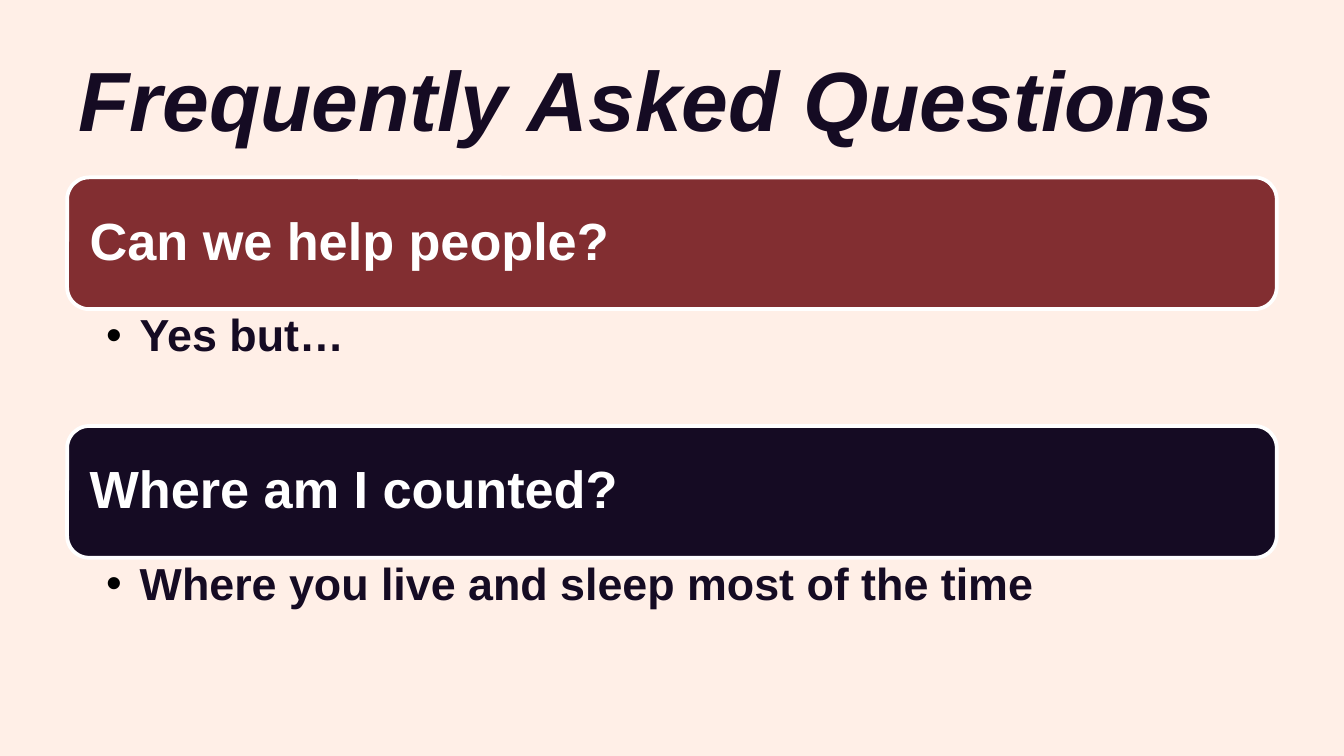
"""Build a slide of frequently asked questions with their answers."""
from dataclasses import dataclass

from lxml import etree
from pptx import Presentation
from pptx import util as u
from pptx.dml.color import RGBColor
from pptx.enum import shapes, text
from pptx.oxml.ns import qn


@dataclass(frozen=True)
class Theme:
    font: str = "Arial"
    paper: str = "FFEFE7"
    ink: str = "150B23"
    red: str = "822E31"
    white: str = "FFFFFF"
    bullet: str = "000000"
    title_size: int = 45
    question_size: int = 28
    answer_size: int = 24


def set_insets(frame, left, top, right, bottom):
    frame.word_wrap = True
    frame.margin_left, frame.margin_top = u.Inches(left), u.Inches(top)
    frame.margin_right, frame.margin_bottom = u.Inches(right), u.Inches(bottom)


def style_span(para, size, color, italic=False):
    font = para.runs[0].font
    font.name, font.size = theme.font, u.Pt(size)
    font.bold, font.italic = True, italic
    font.color.rgb = RGBColor.from_string(color)


theme = Theme()
deck = Presentation()
deck.slide_width = u.Inches(10)
deck.slide_height = deck.slide_width * 9 // 16
page = deck.slides.add_slide(deck.slide_layouts[6])
page.background.fill.solid()
page.background.fill.fore_color.rgb = RGBColor.from_string(theme.paper)

column_left, column_width = u.Inches(0.5), u.Inches(9)
first_row, question_height, answer_height = u.Inches(1.32), u.Inches(0.98), u.Inches(0.87)
row_pitch = question_height + answer_height

title = page.shapes.add_textbox(u.Inches(0.31), u.Inches(0.25), column_width, u.Inches(0.94))
set_insets(title.text_frame, 0.1, 0.1, 0.1, 0.1)
title.text_frame.text = "Frequently Asked Questions"
para = title.text_frame.paragraphs[0]
para.alignment = text.PP_ALIGN.CENTER
style_span(para, theme.title_size, theme.ink, italic=True)

entries = [
    ("Can we help people?", "Yes but…", theme.red),
    ("Where am I counted?", "Where you live and sleep most of the time", theme.ink),
]
for row, (question, answer, color) in enumerate(entries):
    top = first_row + row * row_pitch

    bar = page.shapes.add_shape(
        shapes.MSO_SHAPE.ROUNDED_RECTANGLE, column_left, top, column_width, question_height)
    bar.shadow.inherit = False
    bar.fill.solid()
    bar.fill.fore_color.rgb = RGBColor.from_string(color)
    bar.line.color.rgb = RGBColor.from_string(theme.white)
    bar.line.width = u.Pt(2)
    set_insets(bar.text_frame, 0.12, 0.12, 0.12, 0.12)
    bar.text_frame.vertical_anchor = text.MSO_ANCHOR.MIDDLE
    bar.text_frame.text = question
    para = bar.text_frame.paragraphs[0]
    para.alignment, para.line_spacing = text.PP_ALIGN.LEFT, 0.9
    style_span(para, theme.question_size, theme.white)

    box = page.shapes.add_textbox(
        column_left, top + question_height, column_width, answer_height)
    set_insets(box.text_frame, 0.29, 0.03, 0.19, 0.03)
    box.text_frame.text = answer
    para = box.text_frame.paragraphs[0]
    para.level, para.line_spacing = 1, 0.9
    layout = para._p.get_or_add_pPr()
    layout.set("marL", str(u.Inches(0.25)))
    layout.set("indent", str(-u.Inches(0.25)))
    bullet_color = etree.SubElement(layout, qn("a:buClr"))
    etree.SubElement(bullet_color, qn("a:srgbClr"), val=theme.bullet)
    etree.SubElement(layout, qn("a:buFont"), typeface=theme.font)
    etree.SubElement(layout, qn("a:buChar"), char="•")
    style_span(para, theme.answer_size, theme.ink)

deck.save("out.pptx")
